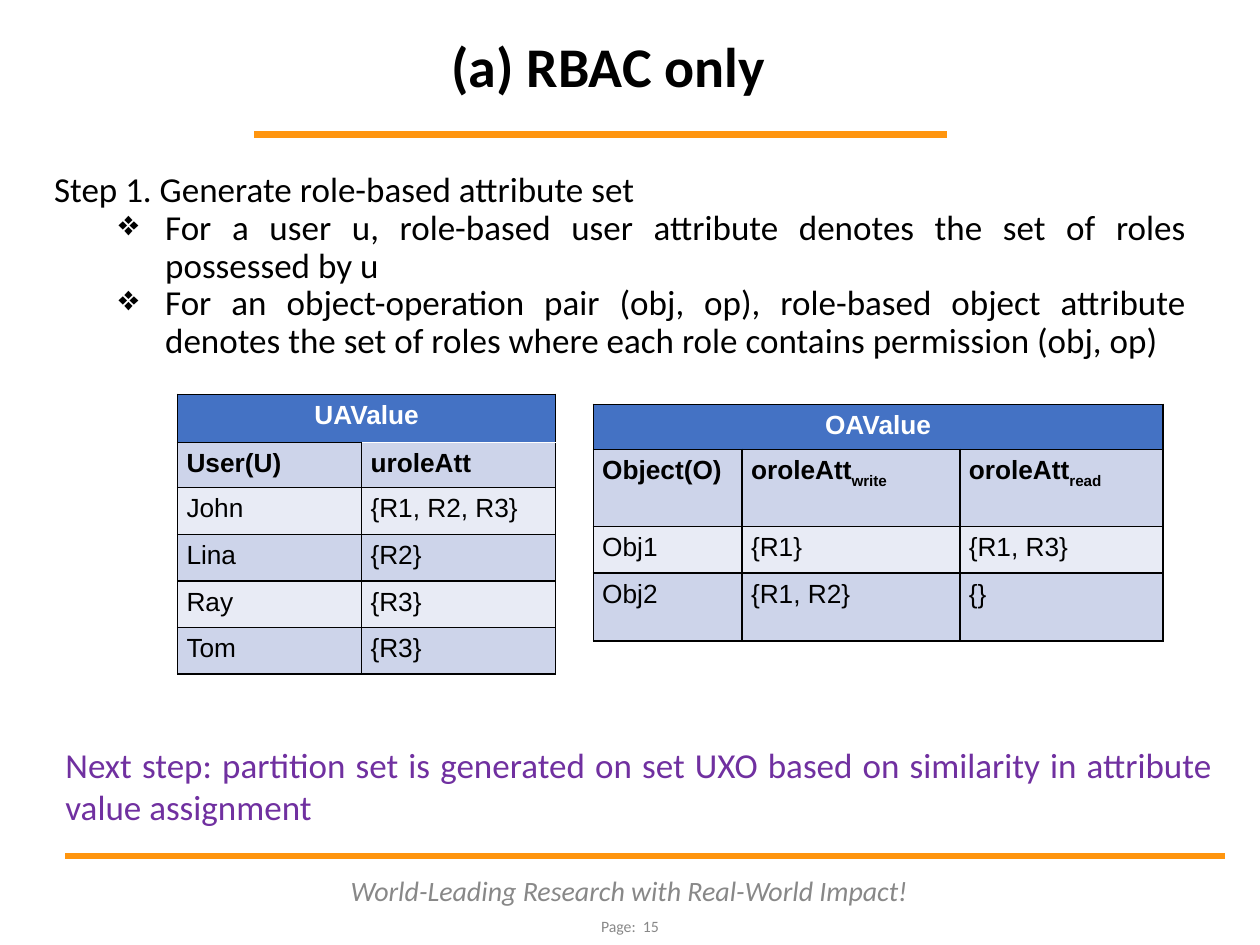
import pptx
import pptx.util
import pptx.dml.color
import pptx.enum.shapes
import pptx.enum.text
import pptx.oxml
import pptx.oxml.ns

Cm = pptx.util.Cm
Pt = pptx.util.Pt
RGBColor = pptx.dml.color.RGBColor
Align = pptx.enum.text.PP_ALIGN
Anchor = pptx.enum.text.MSO_ANCHOR

BLACK = RGBColor(0x00, 0x00, 0x00)
WHITE = RGBColor(0xFF, 0xFF, 0xFF)
ORANGE = RGBColor(0xFF, 0x95, 0x0E)
GRAY = RGBColor(0x88, 0x88, 0x88)
PURPLE = RGBColor(0x70, 0x30, 0xA0)
HEADER_BLUE = RGBColor(0x44, 0x72, 0xC4)
BAND_DARK = RGBColor(0xCD, 0xD4, 0xEA)
BAND_LIGHT = RGBColor(0xE8, 0xEB, 0xF5)


def write(para, text, size=20, font="Calibri", color=BLACK, bold=False,
          italic=False, align=None, spacing=None, subscript=False):
    para.alignment = align
    if spacing:
        para.line_spacing = spacing
    span = para.add_run()
    span.text = text
    span.font.size = Pt(size)
    span.font.name = font
    span.font.color.rgb = color
    span.font.bold = bold
    span.font.italic = italic
    if subscript:
        span.font._element.set("baseline", "-25000")


def element(tag, **attributes):
    node = pptx.oxml.parse_xml(f"<a:{tag} {pptx.oxml.ns.nsdecls('a')}/>")
    for name, value in attributes.items():
        node.set(name, str(value))
    return node


class SlideBuilder:
    table_font = "Arial"
    table_size = 15
    border_width = Pt(0.96)

    def __init__(self, page):
        self.page = page

    def rule(self, left, right, top):
        line = self.page.shapes.add_connector(
            pptx.enum.shapes.MSO_CONNECTOR.STRAIGHT, Cm(left), Cm(top), Cm(right), Cm(top))
        line.line.color.rgb = ORANGE
        line.line.width = Pt(4)
        line._element.spPr.append(element("effectLst"))

    def text(self, left, top, width, height, text, anchor=Anchor.TOP, **style):
        box = self.page.shapes.add_textbox(Cm(left), Cm(top), Cm(width), Cm(height))
        frame = box.text_frame
        frame.word_wrap = True
        frame.vertical_anchor = anchor
        write(frame.paragraphs[0], text, **style)
        return frame

    def bullet(self, frame, text, **style):
        para = frame.add_paragraph()
        para.level = 1
        properties = para._p.get_or_add_pPr()
        properties.set("marL", str(Cm(2.24)))
        properties.set("indent", str(Cm(-0.94)))
        color = element("buClr")
        color.append(element("srgbClr", val=BLACK))
        properties.append(color)
        properties.append(element("buChar", char="❖"))
        write(para, text, **style)

    def outlined_note(self, left, top, width, height, text, **style):
        box = self.page.shapes.add_shape(
            pptx.enum.shapes.MSO_SHAPE.RECTANGLE, Cm(left), Cm(top), Cm(width), Cm(height))
        box.shadow.inherit = False
        box.fill.background()
        box.line.color.rgb = WHITE
        box.line.width = Pt(2.25)
        box.text_frame.word_wrap = True
        box.text_frame.vertical_anchor = Anchor.TOP
        write(box.text_frame.paragraphs[0], text, **style)

    def border(self, cell, top_color=BLACK):
        properties = cell._tc.get_or_add_tcPr()
        for side in "LRTB":
            line = element(f"ln{side}", w=int(self.border_width))
            fill = element("solidFill")
            fill.append(element("srgbClr", val=top_color if side == "T" else BLACK))
            line.append(fill)
            properties.append(line)

    def table(self, left, top, widths, heights, title, rows, white_top=None):
        table = self.page.shapes.add_table(
            len(heights), len(widths), Cm(left), Cm(top),
            Cm(sum(widths)), Cm(sum(heights))).table
        for column, width in zip(table.columns, widths):
            column.width = Cm(width)
        for row, height in zip(table.rows, heights):
            row.height = Cm(height)
        table.cell(0, 0).merge(table.cell(0, len(widths) - 1))
        header = [title] + [""] * (len(widths) - 1)
        for r, texts in enumerate([header] + rows):
            for c, text in enumerate(texts):
                cell = table.cell(r, c)
                cell.margin_left = cell.margin_right = Cm(0.18)
                cell.margin_top = cell.margin_bottom = Cm(0.13)
                self.border(cell, WHITE if (r, c) == white_top else BLACK)
                cell.fill.solid()
                band = BAND_DARK if r % 2 else BAND_LIGHT
                cell.fill.fore_color.rgb = band if r else HEADER_BLUE
                parts = text.split("_") if text else []
                for index, part in enumerate(parts):
                    write(cell.text_frame.paragraphs[0], part, size=self.table_size,
                          font=self.table_font, color=BLACK if r else WHITE,
                          bold=r < 2, align=Align.LEFT if r else Align.CENTER,
                          subscript=index > 0)


def main():
    deck = pptx.Presentation()
    deck.slide_width, deck.slide_height = Cm(25.4), Cm(19.05)
    slide = SlideBuilder(deck.slides.add_slide(deck.slide_layouts[6]))

    slide.rule(5.13, 19.1, 2.72)
    slide.rule(1.32, 24.69, 17.25)
    slide.text(6.55, 17.5, 12.27, 0.91, "World-Leading Research with Real-World Impact!",
               anchor=Anchor.MIDDLE, size=16, color=GRAY, italic=True, align=Align.CENTER)
    slide.text(10.31, 18.21, 4.78, 0.91, "Page:  15",
               anchor=Anchor.MIDDLE, size=9, color=GRAY, align=Align.CENTER)
    slide.text(6.12, 0.51, 12.29, 1.63, "(a) RBAC only", anchor=Anchor.BOTTOM,
               size=32, bold=True, align=Align.CENTER, spacing=0.9)

    body = {"align": Align.JUSTIFY, "spacing": 0.9}
    steps = slide.text(0.84, 3.35, 23.32, 13.36,
                       "Step 1. Generate role-based attribute set", **body)
    for text in (
        "For a user u, role-based user attribute denotes the set of roles possessed by u",
        "For an object-operation pair (obj, op), role-based object attribute denotes "
        "the set of roles where each role contains permission (obj, op)",
    ):
        slide.bullet(steps, text, **body)

    slide.table(3.58, 7.95, [3.71, 3.91], [0.97, 0.91] + [0.94] * 4, "UAValue", [
        ["User(U)", "uroleAtt"],
        ["John", "{R1, R2, R3}"],
        ["Lina", "{R2}"],
        ["Ray", "{R3}"],
        ["Tom", "{R3}"],
    ], white_top=(1, 1))
    slide.table(11.96, 8.15, [3, 4.39, 4.09], [0.91, 1.55, 0.94, 1.37], "OAValue", [
        ["Object(O)", "oroleAtt_write", "oroleAtt_read"],
        ["Obj1", "{R1}", "{R1, R3}"],
        ["Obj2", "{R1, R2}", "{}"],
    ])
    slide.outlined_note(1.07, 14.86, 23.62, 2.29,
                        "Next step: partition set is generated on set UXO based on "
                        "similarity in attribute value assignment",
                        color=PURPLE, align=Align.JUSTIFY)
    deck.save("out.pptx")


if __name__ == "__main__":
    main()
